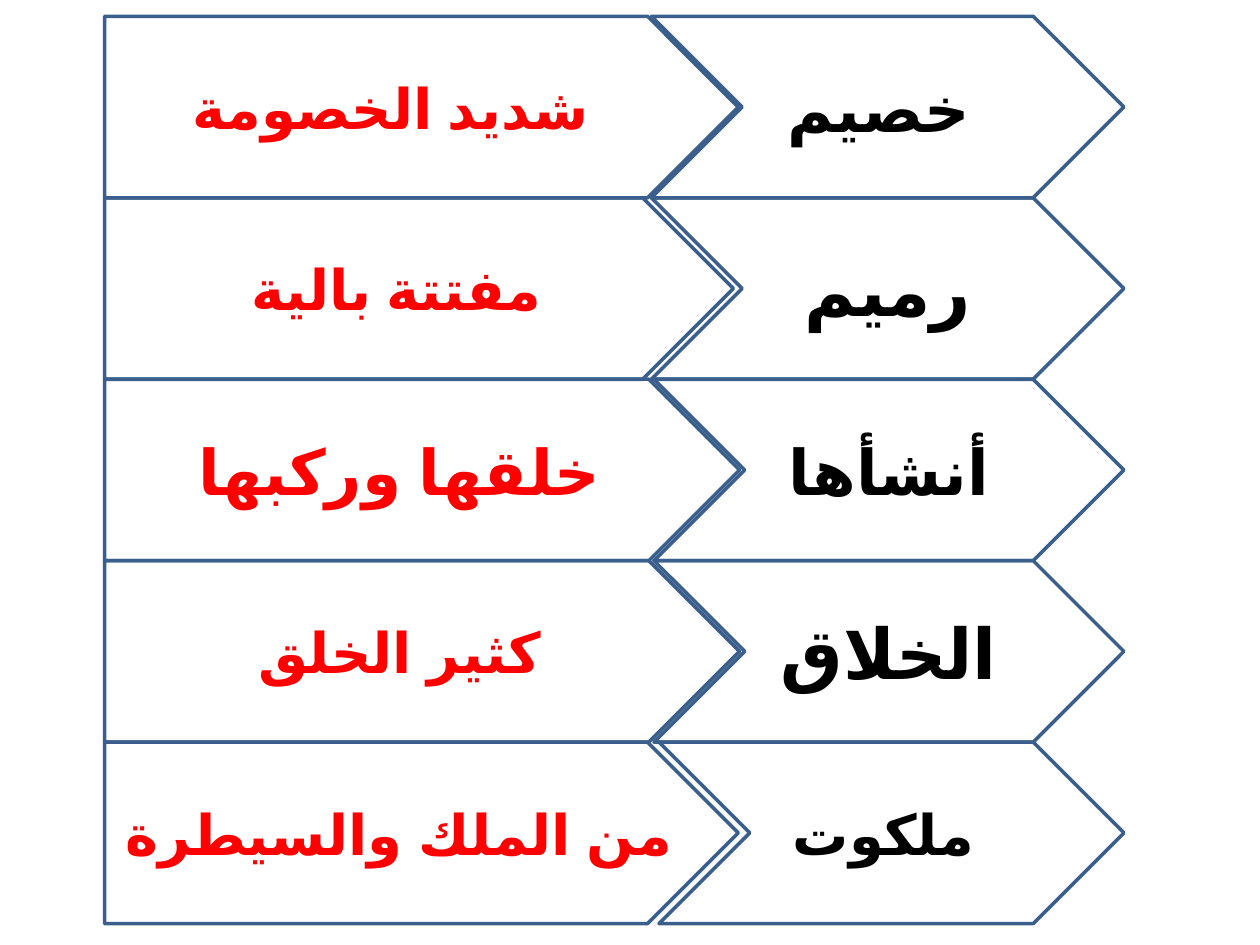
from pptx import Presentation
from pptx.dml.color import RGBColor
from pptx.enum.lang import MSO_LANGUAGE_ID
from pptx.enum.shapes import MSO_SHAPE
from pptx.enum.text import MSO_ANCHOR, PP_ALIGN
from pptx.util import Inches, Pt

FONT = "Times New Roman"
LEFT, RIGHT, TOP, ROW_H = 0.83, 8.92, 0.13, 1.44
ROWS = [
    ("شديد الخصومة ", 32, 5.03, "خصيم ", 36, 5.17),
    ("مفتتة بالية", 32, 4.99, "رميم", 40, 5.17),
    ("خلقها وركبها", 36, 5.04, "أنشأها", 36, 5.19),
    ("كثير الخلق", 32, 5.04, "الخلاق", 40, 5.19),
    ("من الملك والسيطرة", 32, 5.03, "ملكوت ", 32, 5.23),
]


def rgb(value):
    """Turn a hex string into a colour."""
    return RGBColor.from_string(value)


def add_arrow(s, kind, x, y, w, h, text, size, color):
    """Add an outlined arrow with centred bold text."""
    sp = s.shapes.add_shape(kind, Inches(x), Inches(y), Inches(w), Inches(h))
    sp.shadow.inherit = False
    sp.fill.background()
    sp.line.color.rgb = rgb("3A5F8C")
    sp.line.width = Pt(2)
    tf = sp.text_frame
    tf.word_wrap = True
    tf.vertical_anchor = MSO_ANCHOR.MIDDLE
    p = tf.paragraphs[0]
    p.text = text
    p.alignment = PP_ALIGN.CENTER
    r = p.runs[0]
    r.font.name = FONT
    r.font.size = Pt(size)
    r.font.bold = True
    r.font.color.rgb = rgb(color)
    r.font.language_id = MSO_LANGUAGE_ID.ARABIC


def add_row(s, x, y, w, h, row):
    """Place a word and its meaning side by side in a box."""
    meaning, meaning_size, plate_w, word, word_size, word_x = row
    add_arrow(s, MSO_SHAPE.CHEVRON, word_x, y, x + w - word_x, h,
              word, word_size, "000000")
    add_arrow(s, MSO_SHAPE.PENTAGON, x, y, plate_w, h,
              meaning, meaning_size, "FF0000")


def main():
    """Build the vocabulary slide."""
    prs = Presentation()
    prs.slide_width, prs.slide_height = Inches(10), Inches(7.5)
    s = prs.slides.add_slide(prs.slide_layouts[6])
    for i, row in enumerate(ROWS):
        add_row(s, LEFT, TOP + i * ROW_H, RIGHT - LEFT, ROW_H, row)
    prs.save("out.pptx")


if __name__ == "__main__":
    main()
